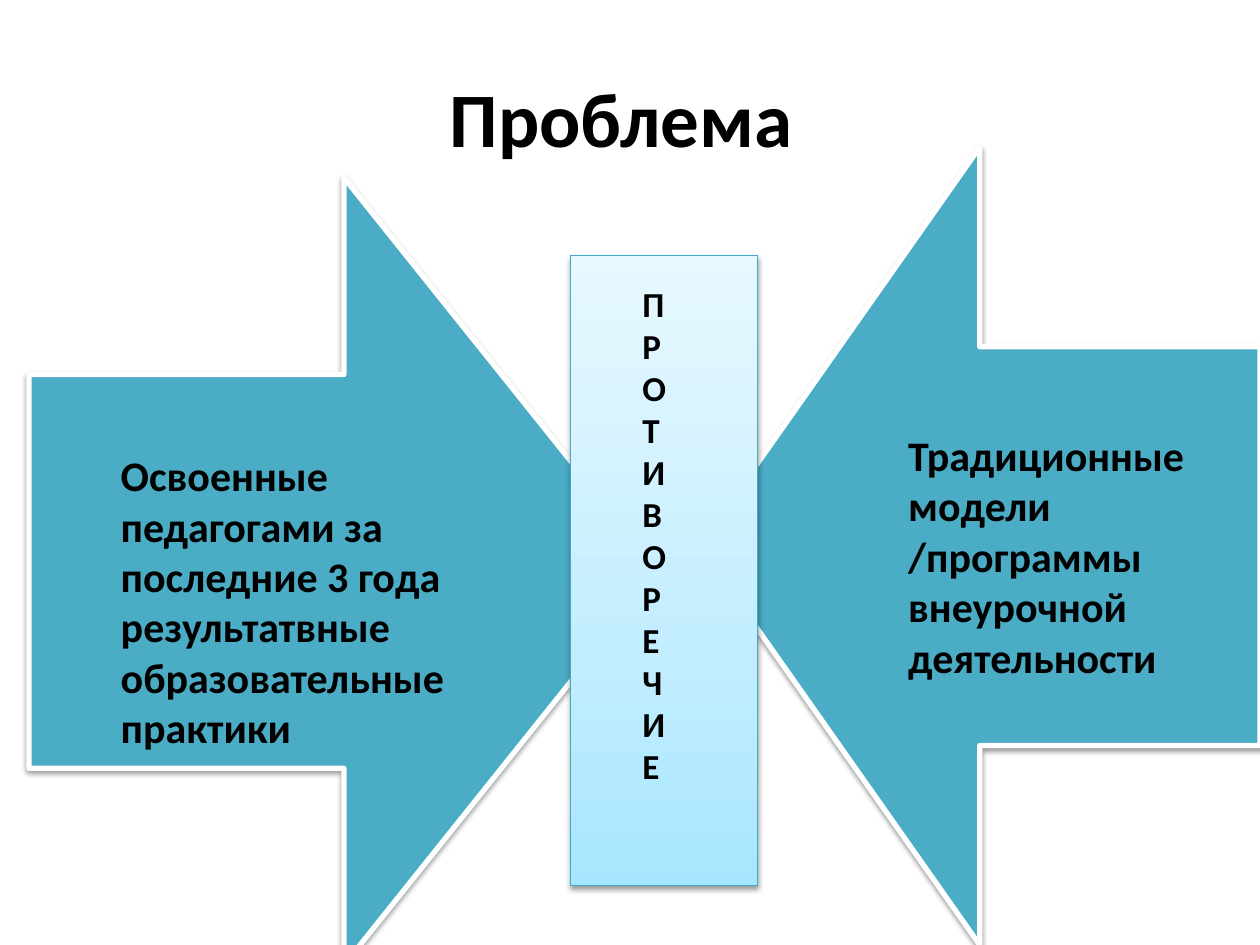
from lxml import etree
from pptx import Presentation
from pptx import util as u
from pptx.dml.color import RGBColor
from pptx.enum import shapes, text
from pptx.oxml import ns, parse_xml

HUES = {
    "ink": "000000",
    "arrow": "4BACC6",
    "edge": "FFFFFF",
    "frame": "46AAC5",
    "low": "A7E6FF",
    "mid": "C1EDFF",
    "top": "E7F8FF",
}
KIND = shapes.MSO_SHAPE


def hue(name):
    return RGBColor.from_string(HUES[name])


def place(box):
    return [u.Inches(n) for n in box]


def add_shade(shape):
    """Give a shape a soft shadow that falls straight down."""
    shape.shadow.inherit = False
    effects = shape._element.spPr.find(ns.qn("a:effectLst"))
    shade = etree.SubElement(effects, ns.qn("a:outerShdw"), blurRad=str(u.Pt(3.1)),
                             dist=str(u.Pt(1.6)), dir="5400000", rotWithShape="0")
    tint = etree.SubElement(shade, ns.qn("a:srgbClr"), val=HUES["ink"])
    etree.SubElement(tint, ns.qn("a:alpha"), val="38000")


def add_blend(shape, stops):
    """Fill a shape with a gradient that runs from bottom to top."""
    marks = "".join(
        f'<a:gs pos="{at * 1000}"><a:srgbClr val="{HUES[name]}"/></a:gs>'
        for at, name in stops)
    blend = parse_xml(
        f'<a:gradFill {ns.nsdecls("a")} rotWithShape="1"><a:gsLst>{marks}</a:gsLst>'
        '<a:lin ang="16200000" scaled="0"/></a:gradFill>')
    shape._element.spPr.find(ns.qn("a:prstGeom")).addnext(blend)


def add_block(slide, kind, box, edge, width):
    shape = slide.shapes.add_shape(kind, *place(box))
    shape.line.color.rgb = hue(edge)
    shape.line.width = u.Pt(width)
    add_shade(shape)
    return shape


def add_arrow(slide, kind, box, turn=0):
    arrow = add_block(slide, kind, box, "edge", 3)
    arrow.fill.solid()
    arrow.fill.fore_color.rgb = hue("arrow")
    arrow.rotation = turn


def add_text(slide, box, lines, size, align=text.PP_ALIGN.LEFT,
             anchor=text.MSO_ANCHOR.TOP):
    frame = slide.shapes.add_textbox(*place(box)).text_frame
    frame.word_wrap = True
    frame.vertical_anchor = anchor
    frame.text = "\n".join(lines)
    look = {"name": "Calibri", "size": u.Pt(size), "bold": True}
    for para in frame.paragraphs:
        para.alignment = align
        font = para.runs[0].font
        for key, value in look.items():
            setattr(font, key, value)
        font.color.rgb = hue("ink")


def main():
    deck = Presentation()
    deck.slide_width, deck.slide_height = u.Inches(10), u.Inches(7.5)
    slide = deck.slides.add_slide(deck.slide_layouts[6])

    # Title
    add_text(slide, (0.5, 0.3, 9, 1.25), ["Проблема "], 44,
             text.PP_ALIGN.CENTER, text.MSO_ANCHOR.MIDDLE)

    # Opposing arrows
    add_arrow(slide, KIND.RIGHT_ARROW, (0.23, 1.41, 5, 6.25))
    add_arrow(slide, KIND.DOWN_ARROW, (4.61, 2.11, 6.33, 4.45), 90)

    # Arrow texts
    add_text(slide, (0.86, 3.52, 3.28, 2.52),
             ["Освоенные педагогами за последние 3 года "
              "результатвные образовательные практики"], 24)
    add_text(slide, (7.11, 3.36, 2.66, 2.12),
             ["Традиционные модели /программы внеурочной деятельности"], 24)

    # Central bar with one letter to a line
    bar = add_block(slide, KIND.RECTANGLE, (4.53, 2.03, 1.48, 5), "frame", 0.75)
    add_blend(bar, [(0, "low"), (35, "mid"), (100, "top")])
    add_text(slide, (5, 2.19, 0.78, 4.44), "ПРОТИВОРЕЧИЕ", 20)

    deck.save("out.pptx")


if __name__ == "__main__":
    main()
